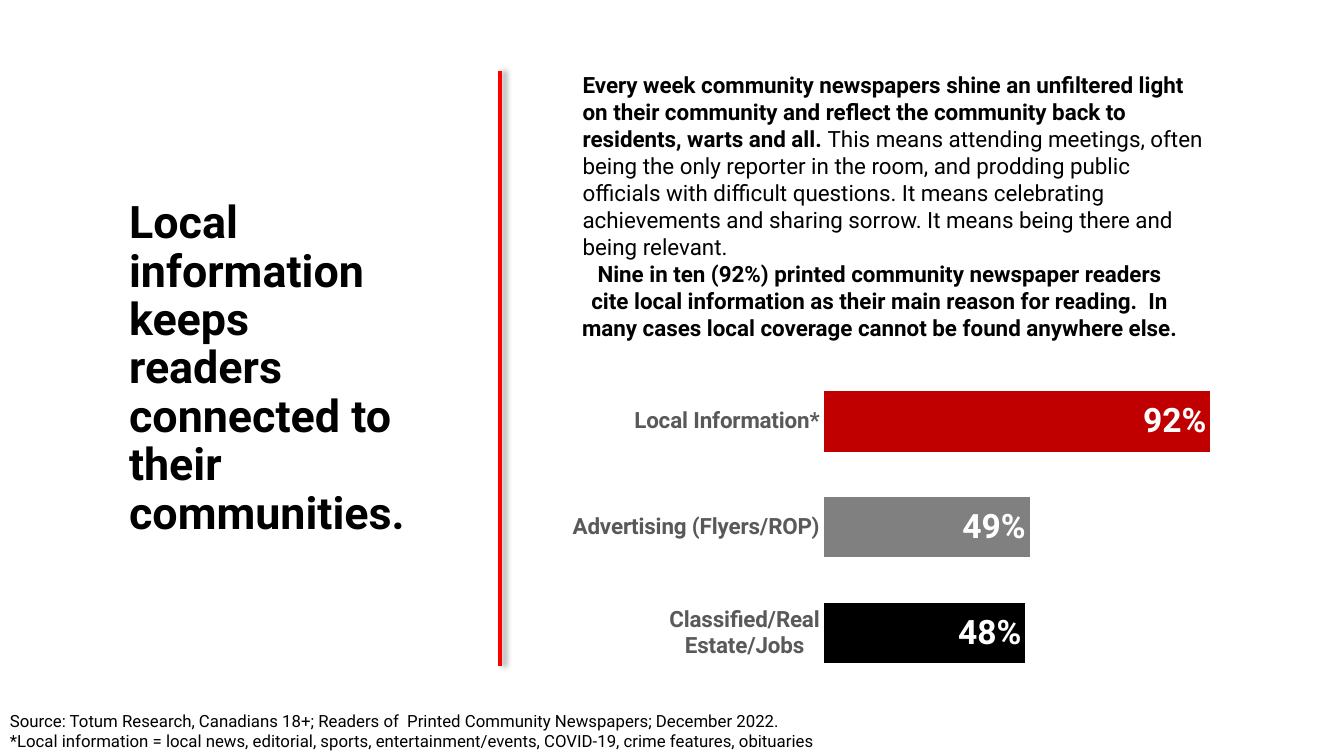
from dataclasses import dataclass

from lxml.etree import SubElement
from pptx import Presentation
from pptx.chart.data import CategoryChartData
from pptx.dml.color import RGBColor
from pptx.enum.chart import XL_CHART_TYPE as ChartType
from pptx.enum.chart import XL_LABEL_POSITION as LabelPosition
from pptx.enum.chart import XL_TICK_MARK as TickMark
from pptx.enum.shapes import MSO_CONNECTOR as Connector
from pptx.enum.text import MSO_ANCHOR as Anchor
from pptx.enum.text import MSO_AUTO_SIZE as AutoSize
from pptx.enum.text import PP_ALIGN as Align
from pptx.oxml import parse_xml
from pptx.oxml.ns import nsdecls, qn
from pptx.util import Inches, Pt

TITLE = "Local information keeps readers connected to their communities."
INTRO = [
    ("Every week community newspapers shine an unfiltered light on their community "
     "and reflect the community back to residents, warts and all. ", True),
    ("This means attending meetings, often being the only reporter in the room, and "
     "prodding public officials with difficult questions. It means celebrating "
     "achievements and sharing sorrow. It means being there and being relevant.", False),
]
FINDING = [
    ("Nine in ten (92%) printed community newspaper readers cite local information as "
     "their main reason for reading.  In many cases local coverage cannot be found "
     "anywhere else.", True),
]
SOURCE_LINES = [
    [("Source: Totum Research, Canadians 18+; Readers of  Printed Community Newspapers; "
      "December 2022.", False)],
    [("*Local information = local news, editorial, sports, entertainment/events, "
      "COVID-19, crime features, obituaries", False)],
]
REASONS = [
    ("Classified/Real Estate/Jobs", 0.48, "000000"),
    ("Advertising (Flyers/ROP)", 0.49, "808080"),
    ("Local Information*", 0.92, "C00000"),
]
PLOT_AREA = {"x": 0.393, "y": 0.223, "w": 0.607, "h": 0.737}


@dataclass(frozen=True)
class Theme:
    font: str = "Roboto"
    chart_font: str = "Arial"
    text: str = "000000"
    axis: str = "595959"
    label: str = "FFFFFF"
    series: str = "E4284D"
    rule: str = "FF0000"
    title_size: int = 32
    label_size: int = 24
    body_size: int = 16
    source_size: int = 12
    chart_size: int = 10


theme = Theme()


def style(font, size, color, bold=None, name=theme.font):
    font.name = name
    font.size = Pt(size)
    font.bold = bold
    font.color.rgb = RGBColor.from_string(color)


def add_text(slide, box, paragraphs, size, align=Align.LEFT, after=0, grow=False):
    shape = slide.shapes.add_textbox(*map(Inches, box))
    frame = shape.text_frame
    frame.word_wrap = True
    frame.auto_size = AutoSize.SHAPE_TO_FIT_TEXT if grow else AutoSize.NONE
    for index, runs in enumerate(paragraphs):
        paragraph = frame.add_paragraph() if index else frame.paragraphs[0]
        paragraph.alignment = align
        paragraph.space_after = Pt(after)
        style(paragraph.font, size, theme.text)
        for text, bold in runs:
            run = paragraph.add_run()
            run.text = text
            run.font.bold = bold


def add_title(slide):
    title = slide.shapes.title
    title.left, title.top, title.width, title.height = map(Inches, (1.18, 0.71, 2.98, 5.91))
    frame = title.text_frame
    frame.text = TITLE
    frame.word_wrap = True
    frame.auto_size = AutoSize.NONE
    frame.vertical_anchor = Anchor.MIDDLE
    paragraph = frame.paragraphs[0]
    paragraph.alignment = Align.LEFT
    paragraph.line_spacing = 0.9
    style(paragraph.font, theme.title_size, theme.text, True)


def add_rule(slide):
    rule = slide.shapes.add_connector(
        Connector.STRAIGHT, *map(Inches, (4.96, 0.7, 4.96, 6.61)))
    rule.line.color.rgb = RGBColor.from_string(theme.rule)
    rule.line.width = Pt(3)
    rule._element.spPr.append(parse_xml(
        f'<a:effectLst {nsdecls("a")}>'
        f'<a:outerShdw blurRad="{Pt(4)}" dist="{Pt(3)}" dir="0" rotWithShape="0">'
        f'<a:srgbClr val="{theme.text}"><a:alpha val="40000"/></a:srgbClr>'
        '</a:outerShdw></a:effectLst>'))


def place_plot(chart):
    plot_area = chart._chartSpace.chart.plotArea
    layout = plot_area.find(qn("c:layout"))
    if layout is None:
        layout = parse_xml(f'<c:layout {nsdecls("c")}/>')
        plot_area.insert(0, layout)
    manual = SubElement(layout, qn("c:manualLayout"))
    settings = {"layoutTarget": "inner", "xMode": "edge", "yMode": "edge", **PLOT_AREA}
    for tag, value in settings.items():
        SubElement(manual, qn(f"c:{tag}")).set("val", str(value))


def add_reasons_chart(slide):
    names, values, colors = zip(*REASONS)
    data = CategoryChartData(number_format="0%")
    data.categories = names
    data.add_series("Series 1", values)
    chart = slide.shapes.add_chart(
        ChartType.BAR_CLUSTERED, *map(Inches, (5.47, 2.7, 6.87, 4.28)), data).chart
    chart.has_legend = False
    chart.has_title = False
    style(chart.font, theme.chart_size, theme.text, name=theme.chart_font)
    place_plot(chart)

    category_axis = chart.category_axis
    category_axis.major_tick_mark = TickMark.NONE
    category_axis.format.line.fill.background()
    style(category_axis.tick_labels.font, theme.body_size, theme.axis, True)
    value_axis = chart.value_axis
    value_axis.visible = False
    value_axis.has_major_gridlines = False
    value_axis.minimum_scale, value_axis.maximum_scale = 0, 1

    plot = chart.plots[0]
    plot.gap_width = 75
    plot.vary_by_categories = False
    series = plot.series[0]
    series.format.fill.solid()
    series.format.fill.fore_color.rgb = RGBColor.from_string(theme.series)
    for index, color in enumerate(colors):
        fill = series.points[index].format.fill
        fill.solid()
        fill.fore_color.rgb = RGBColor.from_string(color)
    labels = series.data_labels
    labels.show_value = True
    labels.position = LabelPosition.INSIDE_END
    labels.number_format = "0%"
    labels.number_format_is_linked = False
    style(labels.font, theme.label_size, theme.label, True)


def main():
    presentation = Presentation()
    presentation.slide_width = Inches(13.33)
    presentation.slide_height = Inches(7.5)
    slide = presentation.slides.add_slide(presentation.slide_layouts[5])
    add_title(slide)
    add_reasons_chart(slide)
    add_text(slide, (0, 7, 11.67, 0.5), SOURCE_LINES, theme.source_size)
    add_text(slide, (5.68, 0.66, 6.38, 1.72), [INTRO], theme.body_size, after=12, grow=True)
    add_text(slide, (5.66, 2.53, 6.13, 0.91), [FINDING], theme.body_size, Align.CENTER, grow=True)
    add_rule(slide)
    presentation.save("out.pptx")


if __name__ == "__main__":
    main()
